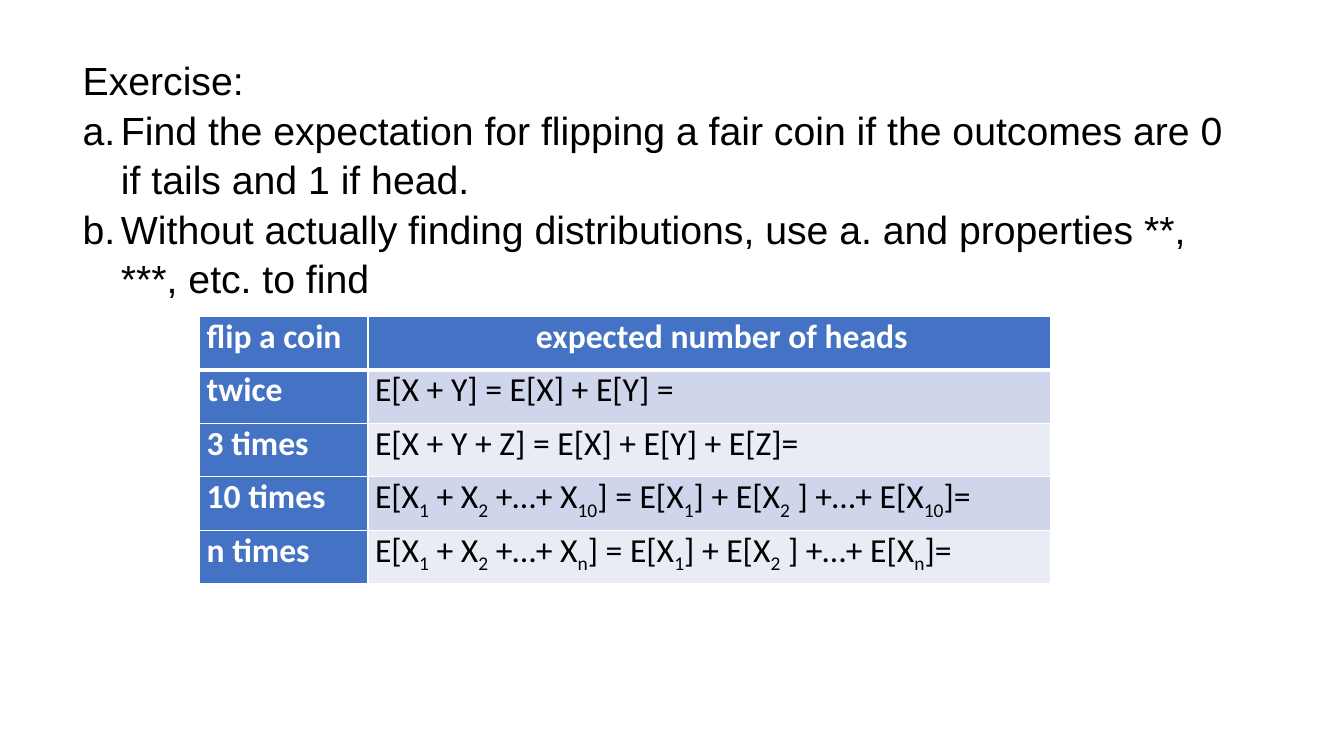
import dataclasses

import pptx
import pptx.dml.color
import pptx.enum.text
import pptx.oxml
import pptx.oxml.ns
import pptx.util

EMU_PER_PX = 9144
NAMESPACE = pptx.oxml.ns.nsdecls("a")
BLUE, WHITE, BLACK = "4472C4", "FFFFFF", "000000"
BANDS = ("CFD5EA", "E9EBF5")
COLUMN_WIDTHS = (167, 677)
ROW_HEIGHT = 53
SUBSCRIPT_MARK = "|"


@dataclasses.dataclass
class ExerciseLine:
    text: str
    lettered: bool = True


@dataclasses.dataclass
class FlipRow:
    flips: str
    expectation: str


EXERCISE = (
    ExerciseLine("Exercise:", lettered=False),
    ExerciseLine(
        "Find the expectation for flipping a fair coin if the outcomes are 0 "
        "if tails and 1 if head."
    ),
    ExerciseLine(
        "Without actually finding distributions, use a. and properties **, "
        "***, etc. to find"
    ),
)


def expectation_of_sum(last: str) -> str:
    return f"E[X|1| + X|2| +…+ X|{last}|] = E[X|1|] + E[X|2| ] +…+ E[X|{last}|]="


ROWS = (
    FlipRow("flip a coin", "expected number of heads"),
    FlipRow("twice", "E[X + Y] = E[X] + E[Y] ="),
    FlipRow("3 times", "E[X + Y + Z] = E[X] + E[Y] + E[Z]="),
    FlipRow("10 times", expectation_of_sum("10")),
    FlipRow("n times", expectation_of_sum("n")),
)


def px(length: int) -> pptx.util.Emu:
    return pptx.util.Emu(length * EMU_PER_PX)


def color(value: str) -> pptx.dml.color.RGBColor:
    return pptx.dml.color.RGBColor.from_string(value)


def add_run(paragraph, text: str, font_name: str, size: int, text_color: str,
            bold: bool = False, subscript: bool = False) -> None:
    run = paragraph.add_run()
    run.text = text
    run.font.name = font_name
    run.font.size = pptx.util.Pt(size)
    run.font.bold = bold
    run.font.color.rgb = color(text_color)
    if subscript:
        run._r.get_or_add_rPr().set("baseline", "-25000")


def set_indent(paragraph, left: int, first: int) -> None:
    properties = paragraph._p.get_or_add_pPr()
    properties.set("marL", str(px(left)))
    properties.set("indent", str(px(first)))


def write_exercise(body) -> None:
    body.left, body.top, body.width, body.height = px(72), px(49), px(1221), px(246)
    frame = body.text_frame
    frame.word_wrap = True
    frame.auto_size = pptx.enum.text.MSO_AUTO_SIZE.SHAPE_TO_FIT_TEXT
    frame.vertical_anchor = pptx.enum.text.MSO_ANCHOR.TOP
    frame.margin_left, frame.margin_right = px(10), px(60)
    frame.margin_top = frame.margin_bottom = px(5)
    for index, line in enumerate(EXERCISE):
        paragraph = frame.add_paragraph() if index else frame.paragraphs[0]
        set_indent(paragraph, *((38, -38) if line.lettered else (0, 0)))
        bullet = 'buAutoNum type="alphaLcPeriod"' if line.lettered else "buNone"
        paragraph._p.get_or_add_pPr().append(
            pptx.oxml.parse_xml(f"<a:{bullet} {NAMESPACE}/>".replace("<a:a:", "<a:"))
        )
        paragraph.space_before = paragraph.space_after = pptx.util.Pt(0)
        paragraph.line_spacing = 1.05
        add_run(paragraph, line.text, "Arial", 28, BLACK)


def set_borders(cell, row: int) -> None:
    thick_sides = {0: "B", 1: "T"}
    for side in "LRTB":
        width = pptx.util.Pt(3 if thick_sides.get(row) == side else 1)
        cell._tc.get_or_add_tcPr().append(pptx.oxml.parse_xml(
            f'<a:ln{side} {NAMESPACE} w="{width}"><a:solidFill>'
            f'<a:srgbClr val="{WHITE}"/></a:solidFill></a:ln{side}>'
        ))


def write_cell(cell, text: str, row: int, is_label: bool) -> None:
    set_borders(cell, row)
    cell.fill.solid()
    cell.fill.fore_color.rgb = color(BLUE if is_label else BANDS[(row - 1) % 2])
    cell.margin_left = cell.margin_right = px(7)
    cell.margin_top = cell.margin_bottom = px(0)
    paragraph = cell.text_frame.paragraphs[0]
    for index, part in enumerate(text.split(SUBSCRIPT_MARK)):
        add_run(paragraph, part, "Calibri", 24, WHITE if is_label else BLACK,
                bold=is_label, subscript=index % 2 == 1)


def add_flip_table(slide) -> None:
    frame = slide.shapes.add_table(
        len(ROWS), len(COLUMN_WIDTHS), px(198), px(314),
        px(sum(COLUMN_WIDTHS)), px(ROW_HEIGHT * len(ROWS)),
    )
    table = frame.table
    for column, width in zip(table.columns, COLUMN_WIDTHS):
        column.width = px(width)
    for row, entry in enumerate(ROWS):
        table.rows[row].height = px(ROW_HEIGHT)
        write_cell(table.cell(row, 0), entry.flips, row, is_label=True)
        write_cell(table.cell(row, 1), entry.expectation, row, is_label=row == 0)
    heading = table.cell(0, 1).text_frame.paragraphs[0]
    heading.alignment = pptx.enum.text.PP_ALIGN.CENTER
    set_indent(heading, 25, 0)


def main() -> None:
    presentation = pptx.Presentation()
    presentation.slide_width, presentation.slide_height = px(1333), px(750)
    slide = presentation.slides.add_slide(presentation.slide_layouts[1])
    title = slide.shapes.title
    title._element.getparent().remove(title._element)
    write_exercise(slide.placeholders[1])
    add_flip_table(slide)
    presentation.save("out.pptx")


if __name__ == "__main__":
    main()
